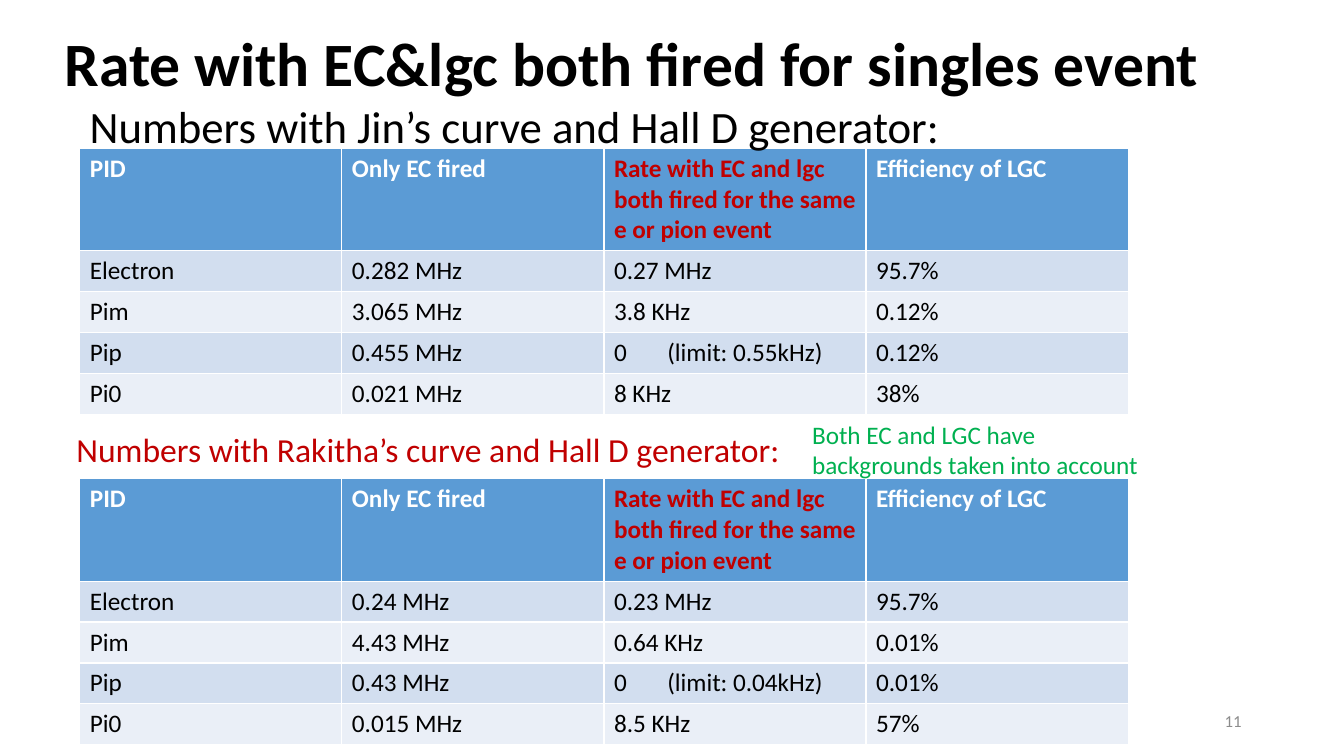
"""Build the slide of EC and LGC singles rates in two tables."""
import dataclasses

import pptx
import pptx.dml.color
import pptx.enum.text
import pptx.util
from lxml import etree

Pt = pptx.util.Pt
RGB = pptx.dml.color.RGBColor.from_string
ALIGN = pptx.enum.text.PP_ALIGN
ANCHOR = pptx.enum.text.MSO_ANCHOR


@dataclasses.dataclass(frozen=True)
class Theme:
    font: str = "Calibri"
    black: str = "000000"
    white: str = "FFFFFF"
    red: str = "C00000"
    green: str = "00B050"
    grey: str = "8C8C8C"
    header: str = "5B9BD5"
    bands: tuple = ("D2DEEF", "EAEFF7")
    title: int = 44
    heading: int = 32
    subheading: int = 24
    body: int = 18
    footer: int = 12


theme = Theme()


def write(tf, text, size, color, bold=False):
    """Set the text of a frame and format it."""
    tf.text = text
    p = tf.paragraphs[0]
    for r in p.runs:
        r.font.name = theme.font
        r.font.size = Pt(size)
        r.font.bold = bold
        r.font.color.rgb = RGB(color)
    return p


prs = pptx.Presentation()
prs.slide_width, prs.slide_height = Pt(960), Pt(540)
s = prs.slides.add_slide(prs.slide_layouts[5])

title = s.shapes.title
title.left, title.top, title.width, title.height = Pt(39), Pt(6.5), Pt(828), Pt(82)
p = write(title.text_frame, "Rate with EC&lgc both fired for singles event",
          theme.title, theme.black, True)
p.alignment = ALIGN.LEFT
p.line_spacing = 0.9
title.text_frame.vertical_anchor = ANCHOR.MIDDLE
title.text_frame.auto_size = pptx.enum.text.MSO_AUTO_SIZE.NONE

header = ("PID", "Only EC fired",
          "Rate with EC and lgc both fired for the same e or pion event",
          "Efficiency of LGC")
jin_rates = (
    ("Electron", "0.282 MHz", "0.27 MHz", "95.7%"),
    ("Pim", "3.065 MHz", "3.8 KHz", "0.12%"),
    ("Pip", "0.455 MHz", "0\t(limit: 0.55kHz)", "0.12%"),
    ("Pi0", "0.021 MHz", "8 KHz", "38%"),
)
rakitha_rates = (
    ("Electron", "0.24 MHz", "0.23 MHz", "95.7%"),
    ("Pim", "4.43 MHz", "0.64 KHz", "0.01%"),
    ("Pip", "0.43 MHz", "0\t(limit: 0.04kHz)", "0.01%"),
    ("Pi0", "0.015 MHz", "8.5 KHz", "57%"),
)
for top, row_height, rates in ((106, 29.2, jin_rates), (342, 28.8, rakitha_rates)):
    rows = (header,) + rates
    table = s.shapes.add_table(len(rows), len(header), Pt(57), Pt(top),
                               Pt(748.8), Pt(73 + row_height * len(rates))).table
    for col in table.columns:
        col.width = Pt(187.2)
    for i, row in enumerate(rows):
        table.rows[i].height = Pt(row_height if i else 73)
        for j, text in enumerate(row):
            cell = table.cell(i, j)
            cell.fill.solid()
            cell.fill.fore_color.rgb = RGB(theme.bands[(i - 1) % 2] if i else theme.header)
            color = theme.black if i else theme.red if j == 2 else theme.white
            p = write(cell.text_frame, text, theme.body, color, i == 0)
            if "\t" in text:
                pPr = p._p.get_or_add_pPr()
                tabs = etree.SubElement(pPr, pptx.oxml.ns.qn("a:tabLst"))
                etree.SubElement(tabs, pptx.oxml.ns.qn("a:tab"), pos=str(Pt(38)), algn="l")

labels = (
    ("Numbers with Jin’s curve and Hall D generator:",
     57, 67, 624, 46, theme.heading, theme.black, False, ALIGN.LEFT, ANCHOR.TOP),
    ("Numbers with Rakitha’s curve and Hall D generator:",
     47.5, 302.5, 518, 36, theme.subheading, theme.red, False, ALIGN.LEFT, ANCHOR.TOP),
    ("Both EC and LGC have backgrounds taken into account",
     573, 296, 249, 51, theme.body, theme.green, True, ALIGN.LEFT, ANCHOR.TOP),
    ("11", 678, 500.5, 216, 29, theme.footer, theme.grey, True, ALIGN.RIGHT, ANCHOR.MIDDLE),
)
for text, left, top, width, height, size, color, wrap, align, anchor in labels:
    tf = s.shapes.add_textbox(Pt(left), Pt(top), Pt(width), Pt(height)).text_frame
    tf.word_wrap = wrap
    tf.vertical_anchor = anchor
    write(tf, text, size, color).alignment = align

prs.save("out.pptx")
